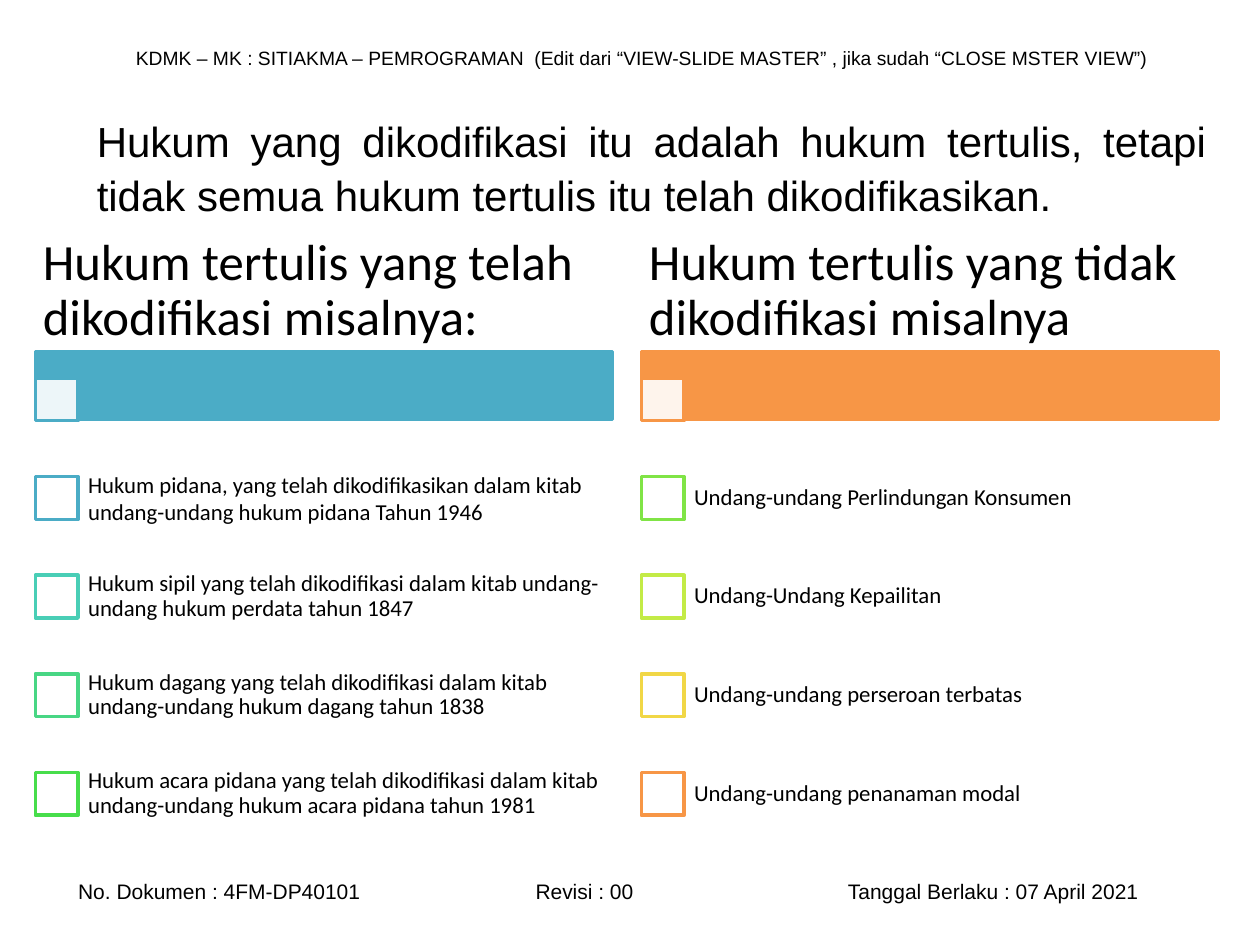
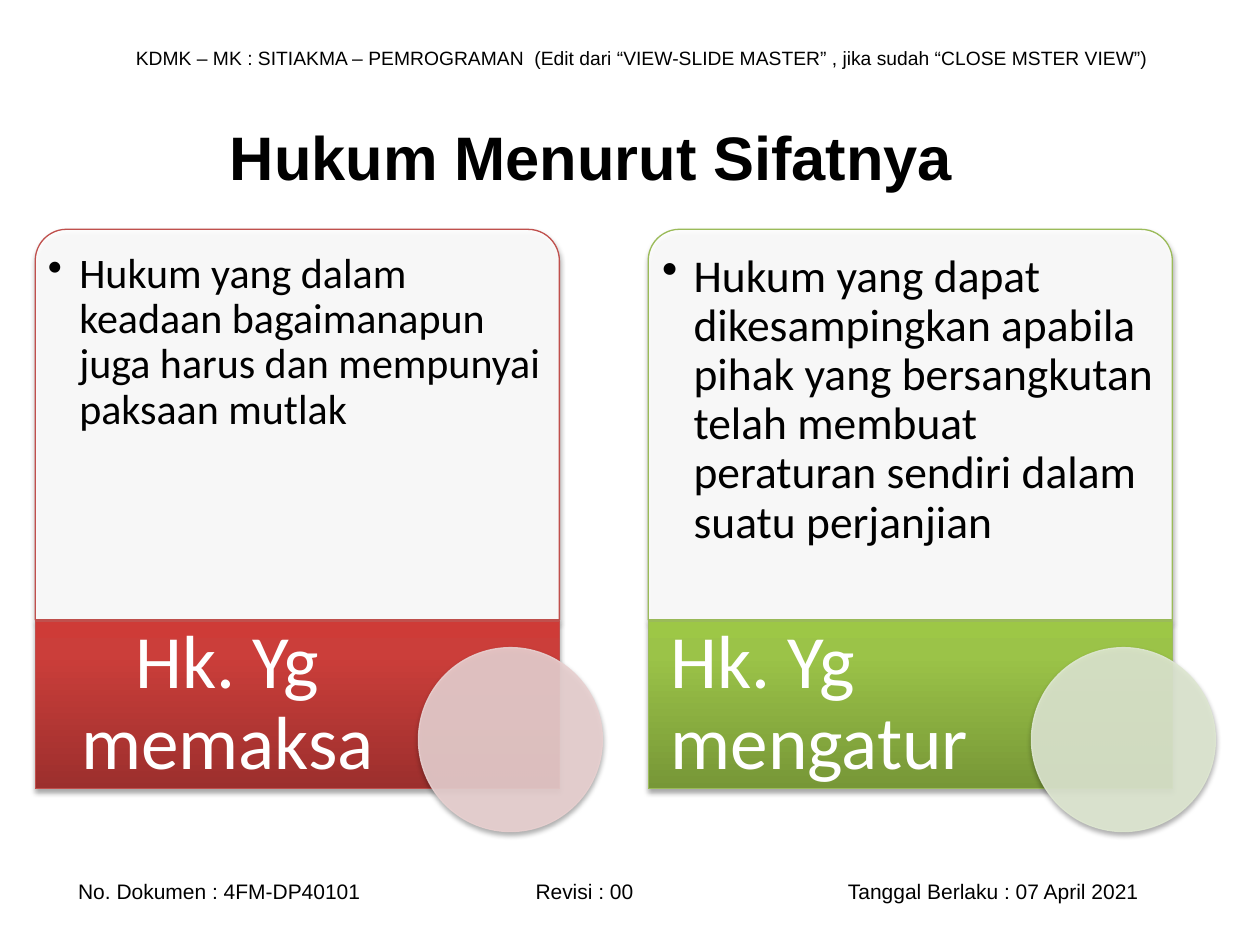
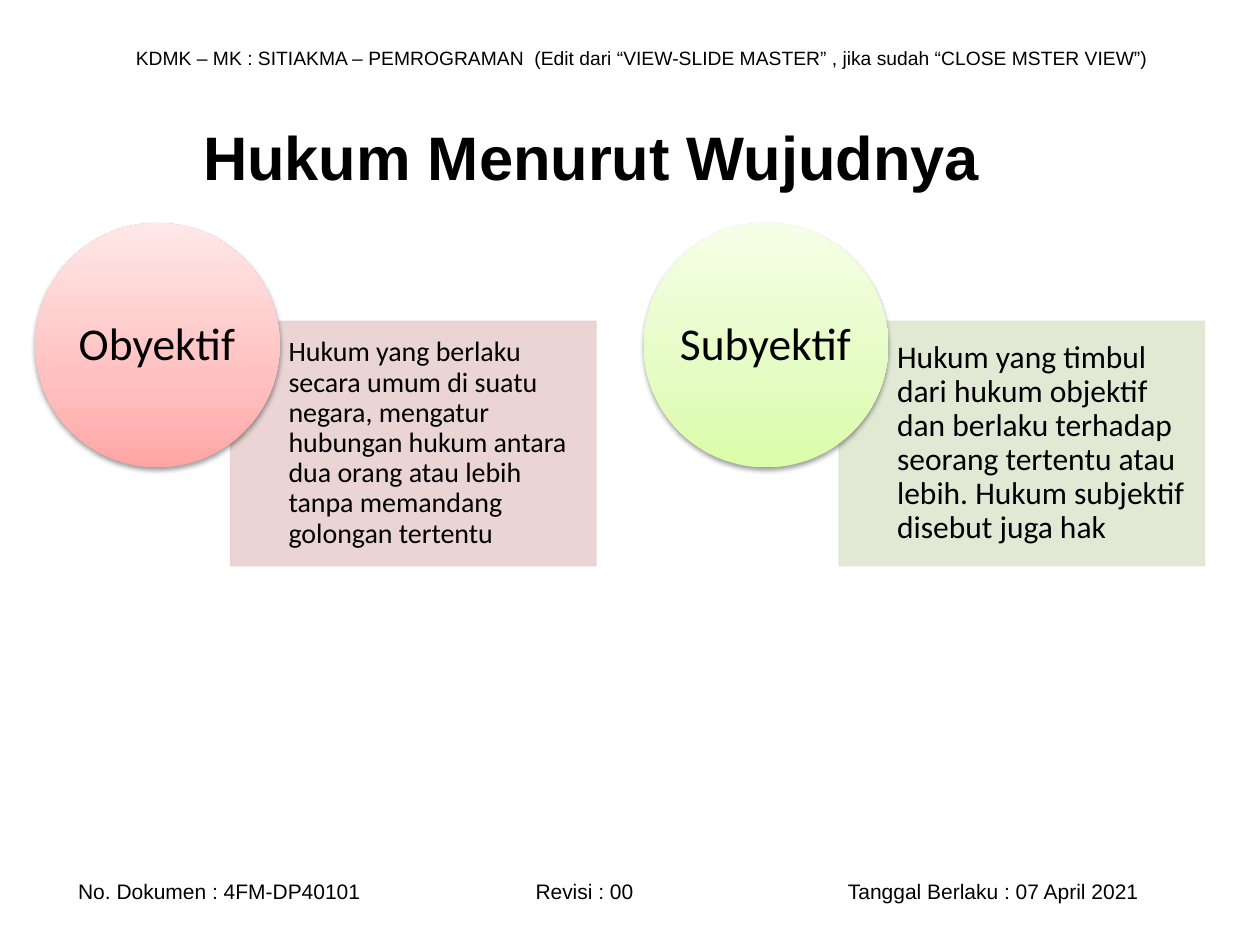
from dataclasses import dataclass

from lxml import etree
from pptx import Presentation
from pptx.dml.color import RGBColor
from pptx.enum.shapes import MSO_SHAPE
from pptx.enum.text import MSO_ANCHOR, PP_ALIGN
from pptx.oxml.ns import qn
from pptx.util import Inches, Pt

RECTANGLE = MSO_SHAPE.RECTANGLE
ELLIPSE = MSO_SHAPE.OVAL
ROUND_TOP = MSO_SHAPE.ROUND_2_SAME_RECTANGLE
TOP, MIDDLE = MSO_ANCHOR.TOP, MSO_ANCHOR.MIDDLE
LEFT, CENTER, JUSTIFY = PP_ALIGN.LEFT, PP_ALIGN.CENTER, PP_ALIGN.JUSTIFY
BLANK_LAYOUT = 6


@dataclass(frozen=True)
class Theme:
    """Colours, fonts and type sizes of the presentation."""

    heading_font: str = "Arial"
    body_font: str = "Calibri"
    ink: str = "000000"
    paper: str = "FFFFFF"
    teal: str = "4BACC6"
    orange: str = "F79646"
    red: str = "C0504D"
    green: str = "9BBB59"
    pale_red: str = "E8D0D0"
    pale_green: str = "DEE7D1"
    written_markers: tuple = ("4BACC6", "49CEB6", "48D684", "47DD4B")
    other_markers: tuple = ("80E446", "C3EB46", "F1D746", "F79646")
    red_band: tuple = ((0, "9C2F2D"), (80, "CB3E3A"), (100, "CE3B37"))
    green_band: tuple = ((0, "779737"), (80, "9BC348"), (100, "9DC746"))
    red_disc: tuple = ((0, "FFA6A5"), (35, "FFC0BF"), (100, "FFE7E7"))
    green_disc: tuple = ((0, "DAFDA7"), (35, "E4FCC2"), (100, "F5FFE7"))
    header_size: int = 11
    footer_size: int = 12
    item_size: int = 13
    definition_sizes: tuple = (16, 18)
    card_sizes: tuple = (24, 26)
    intro_size: int = 24
    disc_size: int = 26
    column_size: int = 29
    title_size: float = 35.1
    band_size: int = 43
    thin_line: float = 0.75
    thick_line: float = 2
    tight: float = 0.9


THEME = Theme()


@dataclass(frozen=True)
class Box:
    """A rectangle in inches that can be divided into smaller ones."""

    left: float
    top: float
    width: float
    height: float

    def share(self, left, top, width, height):
        """Return the box lying at the given percentages of this one."""
        return Box(
            self.left + self.width * left / 100,
            self.top + self.height * top / 100,
            self.width * width / 100,
            self.height * height / 100,
        )

    def columns(self, count, gap):
        """Return equal columns separated by a gap in inches."""
        width = (self.width - gap * (count - 1)) / count
        return [
            Box(self.left + index * (width + gap), self.top, width, self.height)
            for index in range(count)
        ]

    def rows(self, count):
        """Return equal rows without gaps."""
        return [self.share(0, 100 * index / count, 100, 100 / count) for index in range(count)]

    def emu(self):
        """Return the four lengths for the shape methods."""
        return [Inches(value) for value in (self.left, self.top, self.width, self.height)]


SLIDE = Box(0, 0, 10, 7.5)


def add_text(slide, box, text, size, font=THEME.body_font, color=THEME.ink, bold=False,
             align=LEFT, anchor=MIDDLE, insets=(0.1, 0.05, 0.1, 0.05), spacing=1,
             bullet=False, tabs=()):
    """Add a wrapped text box holding one paragraph."""
    frame = slide.shapes.add_textbox(*box.emu()).text_frame
    frame.word_wrap = True
    frame.vertical_anchor = anchor
    frame.margin_left, frame.margin_top, frame.margin_right, frame.margin_bottom = [
        Inches(inset) for inset in insets
    ]
    paragraph = frame.paragraphs[0]
    paragraph.alignment = align
    paragraph.line_spacing = spacing
    properties = paragraph._p.get_or_add_pPr()
    if bullet:
        properties.set("marL", str(Inches(0.25)))
        properties.set("indent", str(-Inches(0.25)))
        etree.SubElement(properties, qn("a:buChar"), char="•")
    if tabs:
        tab_list = etree.SubElement(properties, qn("a:tabLst"))
        for tab in tabs:
            etree.SubElement(tab_list, qn("a:tab"), pos=str(Inches(tab)), algn="l")
    run = paragraph.add_run()
    run.text = text
    run.font.name = font
    run.font.size = Pt(size)
    run.font.bold = bold
    run.font.color.rgb = RGBColor.from_string(color)


def fill_gradient(shape, stops):
    """Fill a shape with colour stops running from bottom to top."""
    shape.fill.gradient()
    shape.fill.gradient_angle = 90
    stop_list = shape._element.spPr.find(qn("a:gradFill")).find(qn("a:gsLst"))
    for stop in list(stop_list):
        stop_list.remove(stop)
    for position, color in stops:
        stop = etree.SubElement(stop_list, qn("a:gs"), pos=str(position * 1000))
        etree.SubElement(stop, qn("a:srgbClr"), val=color)


def add_shadow(shape, opacity):
    """Give a shape a soft shadow straight below it."""
    effects = shape._element.spPr.find(qn("a:effectLst"))
    shadow = etree.SubElement(effects, qn("a:outerShdw"), blurRad=str(Pt(3.1)),
                              dist=str(Pt(1.8)), dir="5400000", rotWithShape="0")
    color = etree.SubElement(shadow, qn("a:srgbClr"), val=THEME.ink)
    etree.SubElement(color, qn("a:alpha"), val=str(opacity * 1000))


def add_figure(slide, kind, box, fill, line=None, weight=THEME.thin_line,
               opacity=100, shadow=0):
    """Add a preset shape with a plain or gradient fill."""
    shape = slide.shapes.add_shape(kind, *box.emu())
    shape.shadow.inherit = False
    if isinstance(fill, tuple):
        fill_gradient(shape, fill)
    else:
        shape.fill.solid()
        shape.fill.fore_color.rgb = RGBColor.from_string(fill)
    if line:
        shape.line.color.rgb = RGBColor.from_string(line)
        shape.line.width = Pt(weight)
    else:
        shape.line.fill.background()
    if opacity < 100:
        for color in shape._element.spPr.iter(qn("a:srgbClr")):
            if color.get("val") == fill:
                etree.SubElement(color, qn("a:alpha"), val=str(opacity * 1000))
    if shadow:
        add_shadow(shape, shadow)
    return shape


def add_page(presentation):
    """Add a blank slide with the shared header and footer lines."""
    slide = presentation.slides.add_slide(presentation.slide_layouts[BLANK_LAYOUT])
    add_text(slide, SLIDE.share(9.8, 4.13, 83.5, 3.87),
             "KDMK – MK : SITIAKMA – PEMROGRAMAN  (Edit dari “VIEW-SLIDE MASTER” , "
             "jika sudah “CLOSE MSTER VIEW”)",
             THEME.header_size, THEME.heading_font, align=JUSTIFY)
    add_text(slide, SLIDE.share(2, 92.27, 94.5, 4),
             "No. Dokumen : 4FM-DP40101\tRevisi : 00\tTanggal Berlaku : 07 April 2021",
             THEME.footer_size, THEME.heading_font,
             insets=(0.42, 0.05, 0.1, 0.05), tabs=(3.63, 6.11))
    return slide


def add_title(slide, text):
    """Add the bold centred title."""
    add_text(slide, SLIDE.share(2.8, 8.13, 88.2, 16.67), text, THEME.title_size,
             THEME.heading_font, bold=True, align=CENTER)


def add_checklist(slide, box, heading, accent, markers, items, first_spacing):
    """Add a heading, a coloured bar and a list with square markers."""
    add_figure(slide, RECTANGLE, box.share(0, 19.75, 100, 11.1), accent, accent,
               THEME.thick_line)
    add_figure(slide, RECTANGLE, box.share(0, 24.07, 7.42, 7), THEME.paper, accent,
               THEME.thick_line, opacity=90)
    add_text(slide, box.share(0, 0, 100, 20), heading, THEME.column_size,
             insets=(0.06, 0.04, 0.06, 0.04), spacing=THEME.tight)
    rows = box.share(0, 35.6, 100, 64.4).rows(len(items))
    for index, (row, marker, item) in enumerate(zip(rows, markers, items)):
        add_figure(slide, RECTANGLE, row.share(0, 28.5, 7.42, 43.45), THEME.paper, marker,
                   THEME.thick_line)
        add_text(slide, row.share(7, 0, 93, 100), item, THEME.item_size, insets=(0.1,) * 4,
                 spacing=THEME.tight if index else first_spacing)


def add_card(slide, box, accent, band, pale, text, size, inset, label, label_align):
    """Add a rounded card with a labelled band and a pale circle."""
    body = add_figure(slide, ROUND_TOP, box.share(0, 0, 92.34, 64.85), THEME.paper, accent,
                      opacity=90, shadow=35)
    body.adjustments[0] = 0.08
    body.adjustments[1] = 0
    add_text(slide, box.share(1.55, 1.67, 89, 63.39), text, size, anchor=TOP,
             insets=(inset, inset + 0.07, inset, inset), spacing=THEME.tight, bullet=True)
    add_figure(slide, RECTANGLE, box.share(0, 65.06, 92.34, 27.82), band, accent, shadow=35)
    add_text(slide, box.share(0, 65.06, 65.04, 27.82), label, THEME.band_size,
             color=THEME.paper, align=label_align, insets=(0.18, 0, 0.06, 0),
             spacing=THEME.tight)
    add_figure(slide, ELLIPSE, box.share(67.5, 69.46, 32.41, 30.54), pale, pale,
               opacity=90, shadow=35)


def add_definition(slide, box, disc, pale, term, text, size, inset):
    """Add a term in a disc that overlaps its definition panel."""
    add_figure(slide, RECTANGLE, box.share(34.83, 28.68, 65.17, 71.32), pale, pale, opacity=90)
    add_text(slide, box.share(45.17, 28.68, 54.83, 71.32), text, size,
             insets=(0, inset, inset, inset), spacing=THEME.tight)
    add_figure(slide, ELLIPSE, box.share(0, 0, 43.6, 71.32), disc, shadow=38)
    add_text(slide, box.share(6.3, 10.66, 30.8, 50.37), term, THEME.disc_size, align=CENTER,
             insets=(0,) * 4, spacing=THEME.tight)


def build_codification(presentation):
    """Build the slide comparing codified and uncodified written law."""
    slide = add_page(presentation)
    add_text(slide, SLIDE.share(6.7, 11.2, 90, 12.53),
             "Hukum yang dikodifikasi itu adalah hukum tertulis, tetapi tidak semua hukum "
             "tertulis itu telah dikodifikasikan.",
             THEME.intro_size, THEME.heading_font, align=JUSTIFY, anchor=TOP, spacing=1.07)
    codified, uncodified = SLIDE.share(2.8, 24.4, 93.9, 64.8).columns(2, 0.23)
    add_checklist(slide, codified, "Hukum tertulis yang telah dikodifikasi misalnya:",
                  THEME.teal, THEME.written_markers, (
                      "Hukum pidana, yang telah dikodifikasikan dalam kitab undang-undang "
                      "hukum pidana Tahun 1946",
                      "Hukum sipil yang telah dikodifikasi dalam kitab undang-undang hukum "
                      "perdata tahun 1847",
                      "Hukum dagang yang telah dikodifikasi dalam kitab undang-undang hukum "
                      "dagang tahun 1838",
                      "Hukum acara pidana yang telah dikodifikasi dalam kitab undang-undang "
                      "hukum acara pidana tahun 1981",
                  ), first_spacing=1)
    add_checklist(slide, uncodified, "Hukum tertulis yang tidak dikodifikasi misalnya",
                  THEME.orange, THEME.other_markers, (
                      "Undang-undang Perlindungan Konsumen",
                      "Undang-Undang Kepailitan",
                      "Undang-undang perseroan terbatas",
                      "Undang-undang penanaman modal",
                  ), first_spacing=THEME.tight)


def build_nature(presentation):
    """Build the slide on law by its nature."""
    slide = add_page(presentation)
    add_title(slide, "Hukum Menurut Sifatnya")
    forcing, regulating = SLIDE.share(2.8, 24.27, 93.7, 63.73).columns(2, 0.36)
    add_card(slide, forcing, THEME.red, THEME.red_band, THEME.pale_red,
             "Hukum yang dalam keadaan bagaimanapun juga harus dan mempunyai paksaan mutlak",
             THEME.card_sizes[0], 0.03, "Hk. Yg memaksa", CENTER)
    add_card(slide, regulating, THEME.green, THEME.green_band, THEME.pale_green,
             "Hukum yang dapat dikesampingkan apabila pihak yang bersangkutan telah membuat "
             "peraturan sendiri dalam suatu perjanjian",
             THEME.card_sizes[1], 0.04, "Hk. Yg mengatur", LEFT)


def build_form(presentation):
    """Build the slide on law by its form."""
    slide = add_page(presentation)
    add_title(slide, "Hukum Menurut Wujudnya")
    objective, subjective = SLIDE.share(2.8, 23.6, 92.8, 36.27).columns(2, 0.38)
    add_definition(slide, objective, THEME.red_disc, THEME.pale_red, "Obyektif",
                   "Hukum yang berlaku secara umum di suatu negara, mengatur hubungan hukum "
                   "antara dua orang atau lebih tanpa memandang golongan tertentu",
                   THEME.definition_sizes[0], 0.12)
    add_definition(slide, subjective, THEME.green_disc, THEME.pale_green, "Subyektif",
                   "Hukum yang timbul dari hukum objektif dan berlaku terhadap seorang "
                   "tertentu atau lebih. Hukum subjektif disebut juga hak",
                   THEME.definition_sizes[1], 0.14)


def main():
    """Build and save the presentation."""
    presentation = Presentation()
    presentation.slide_width = Inches(SLIDE.width)
    presentation.slide_height = Inches(SLIDE.height)
    build_codification(presentation)
    build_nature(presentation)
    build_form(presentation)
    presentation.save("out.pptx")


if __name__ == "__main__":
    main()
